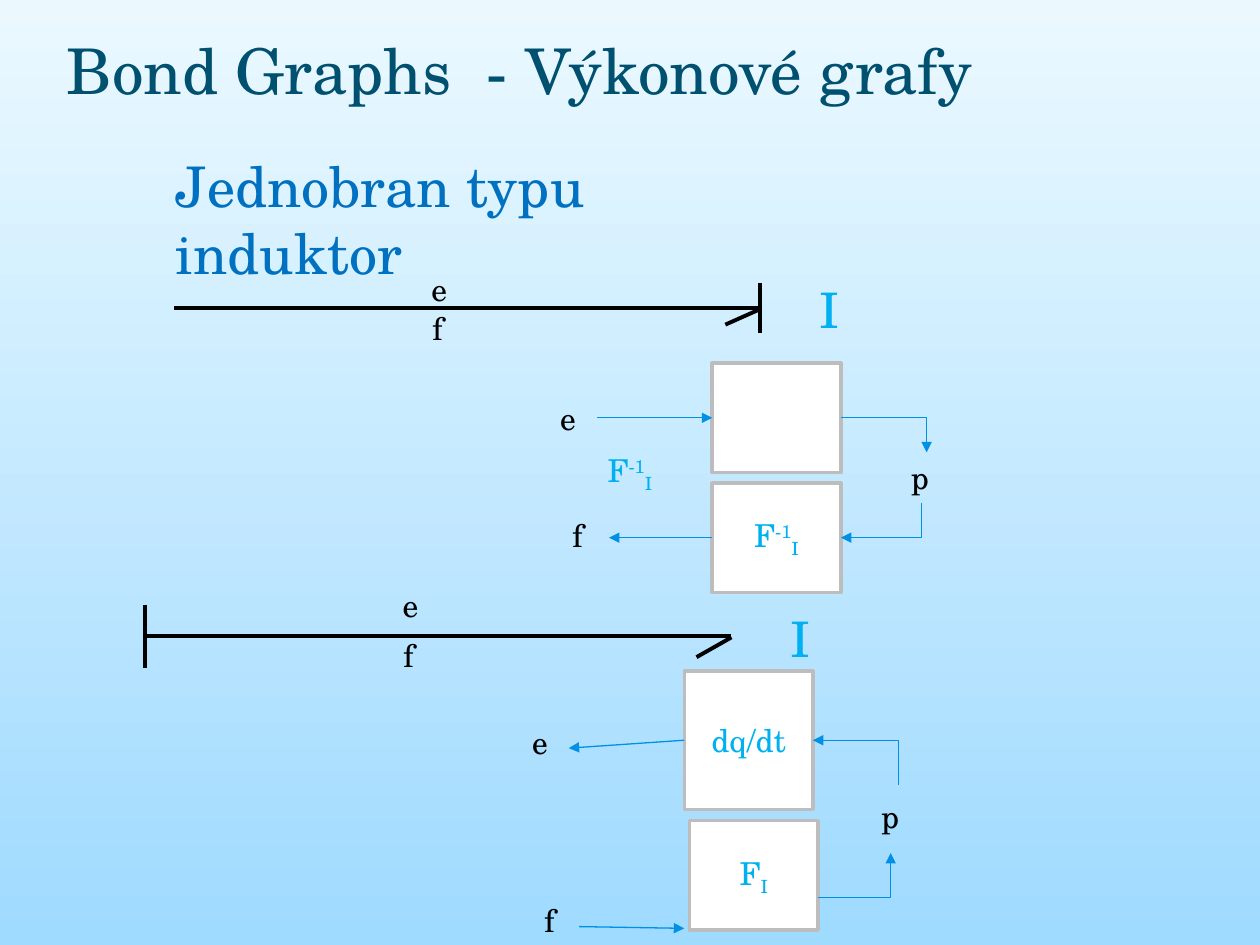
from lxml import etree
from pptx import Presentation
from pptx.dml.color import RGBColor
from pptx.enum.shapes import MSO_CONNECTOR as LINK, MSO_SHAPE as SHAPE
from pptx.enum.text import MSO_ANCHOR as ANCHOR, PP_ALIGN as ALIGN
from pptx.oxml.ns import qn
from pptx.util import Pt

FONT = "TeX Gyre Schola"
COLORS = {
    "sky_top": "EBF9FF", "sky_bottom": "9FDAFF", "title": "005070",
    "heading": "0070C0", "symbol": "00B0F0", "flow": "0090E6",
    "ink": "000000", "box": "FFFFFF", "edge": "BDBDBD",
}
INVERSE = [("F", 0), ("-1", 30), ("I", -25)]
DIRECT = [("F", 0), ("I", -25)]
DERIVATIVE = [("dq/dt", 0)]


def color(name):
    return RGBColor.from_string(COLORS[name])


def style_runs(para, size, name):
    for span in para.runs:
        span.font.name = FONT
        span.font.size = Pt(size)
        span.font.color.rgb = color(name)


def write_formula(frame, parts):
    frame.vertical_anchor = ANCHOR.MIDDLE
    para = frame.paragraphs[0]
    para.alignment = ALIGN.CENTER
    for text, shift in parts:
        span = para.add_run()
        span.text = text
        if shift:
            span.font._element.set("baseline", str(shift * 1000))
    style_runs(para, 18, "symbol")


def add_label(page, text, left, top, width=30, height=29, size=18, name="ink"):
    box = page.shapes.add_textbox(Pt(left), Pt(top), Pt(width), Pt(height))
    box.text_frame.word_wrap = True
    box.text_frame.text = text
    style_runs(box.text_frame.paragraphs[0], size, name)
    return box


def add_line(page, start, end, name="ink", weight=2.25, tip=None, bent=False):
    kind = LINK.ELBOW if bent else LINK.STRAIGHT
    line = page.shapes.add_connector(kind, *(Pt(v) for v in (*start, *end)))
    if bent:
        line._element.spPr.find(qn("a:prstGeom")).set("prst", "bentConnector2")
    line.line.color.rgb = color(name)
    line.line.width = Pt(weight)
    if tip:
        etree.SubElement(line.line._get_or_add_ln(), qn(f"a:{tip}"), type="triangle")
    etree.SubElement(line._element.spPr, qn("a:effectLst"))
    return line


def add_flow(page, start, end, tip, bent=False):
    return add_line(page, start, end, "flow", 0.75, tip, bent)


def add_block(page, left, top, width, height, formula):
    block = page.shapes.add_shape(SHAPE.RECTANGLE, Pt(left), Pt(top), Pt(width), Pt(height))
    block.shadow.inherit = False
    block.fill.solid()
    block.fill.fore_color.rgb = color("box")
    block.line.color.rgb = color("edge")
    block.line.width = Pt(2)
    if formula:
        write_formula(block.text_frame, formula)
    return block


def add_title(page, left, top, width, height):
    title = page.shapes.title
    title.left, title.top, title.width, title.height = map(Pt, (left, top, width, height))
    title.text_frame.text = "Bond Graphs  - Výkonové grafy"
    title.text_frame.vertical_anchor = ANCHOR.MIDDLE
    para = title.text_frame.paragraphs[0]
    para.alignment = ALIGN.LEFT
    style_runs(para, 36, "title")


def add_bond(page, left, top, height, bar_at_end):
    length = 335
    right = left + length
    axis = top + 0.49 * height
    bar = right if bar_at_end else left
    add_line(page, (left, axis), (right, axis))
    add_line(page, (right, axis + 0.5), (right - 20, top + 0.64 * height))
    add_line(page, (bar, top + 0.26 * height), (bar, top + 0.72 * height))
    add_label(page, "e", left + 140, top + 0.08 * height)
    add_label(page, "f", left + 140.5, top + 0.44 * height)
    symbol = add_label(page, "I", left + 341, top, 67, height, 28, "symbol")
    symbol.text_frame.vertical_anchor = ANCHOR.MIDDLE
    symbol.text_frame.paragraphs[0].alignment = ALIGN.CENTER


def add_integral_loop(page, left, top):
    width, height, step = 73.5, 62.5, 68.5
    right = left + width
    upper = add_block(page, left, top, width, height, None)
    lower = add_block(page, left, top + step, width, height, INVERSE)
    middle = top + height / 2
    add_label(page, "e", left - 94, top + 17)
    add_label(page, "f", left - 87, top + 84)
    add_label(page, "p", right + 33, top + 50.5)
    add_flow(page, (left - 66, middle), (left, middle), "tailEnd").end_connect(upper, 1)
    add_flow(page, (left, middle + step), (left - 59, middle + step),
             "tailEnd").begin_connect(lower, 1)
    add_flow(page, (right, middle), (right + 49, top + 51), "tailEnd", True)
    add_flow(page, (right, middle + step), (right + 46, top + 80), "headEnd", True)
    formula = page.shapes.add_textbox(Pt(left - 67), Pt(top + 48), Pt(40), Pt(29))
    formula.text_frame.word_wrap = False
    write_formula(formula.text_frame, INVERSE)


def add_derivative_loop(page, left, top):
    width, height, step = 73.5, 79, 85.5
    right = left + width
    middle = top + height / 2
    add_label(page, "e", left - 94, top + 26)
    add_label(page, "f", left - 87, top + 128)
    add_label(page, "p", right + 32, top + 68.5)
    upper = add_block(page, left, top, width, height, DERIVATIVE)
    add_block(page, left + 3, top + step, width, 62.5, DIRECT)
    add_flow(page, (left - 66, middle + 4.5), (left, middle), "headEnd").end_connect(upper, 1)
    add_flow(page, (left - 60, top + 146), (left, top + 147), "tailEnd")
    add_flow(page, (right, middle), (right + 49, top + 65), "headEnd", True)
    add_flow(page, (right + 3, top + 129.5), (right + 44.5, top + 104), "tailEnd", True)


def main():
    deck = Presentation()
    deck.slide_width, deck.slide_height = Pt(720), Pt(540)
    page = deck.slides.add_slide(deck.slide_layouts[5])
    fill = page.background.fill
    fill.gradient()
    fill.gradient_angle = 270
    for stop, name in zip(fill.gradient_stops, ("sky_top", "sky_bottom")):
        stop.color.rgb = color(name)
    add_title(page, 31, 0, 647, 79)
    add_label(page, "Jednobran typu induktor", 93.5, 83, 385, 46, 32, "heading")
    add_bond(page, 99.5, 145.5, 62.5, True)
    add_integral_loop(page, 407, 207.5)
    add_bond(page, 83, 325, 79, False)
    add_derivative_loop(page, 391, 383.5)
    deck.save("out.pptx")


if __name__ == "__main__":
    main()
